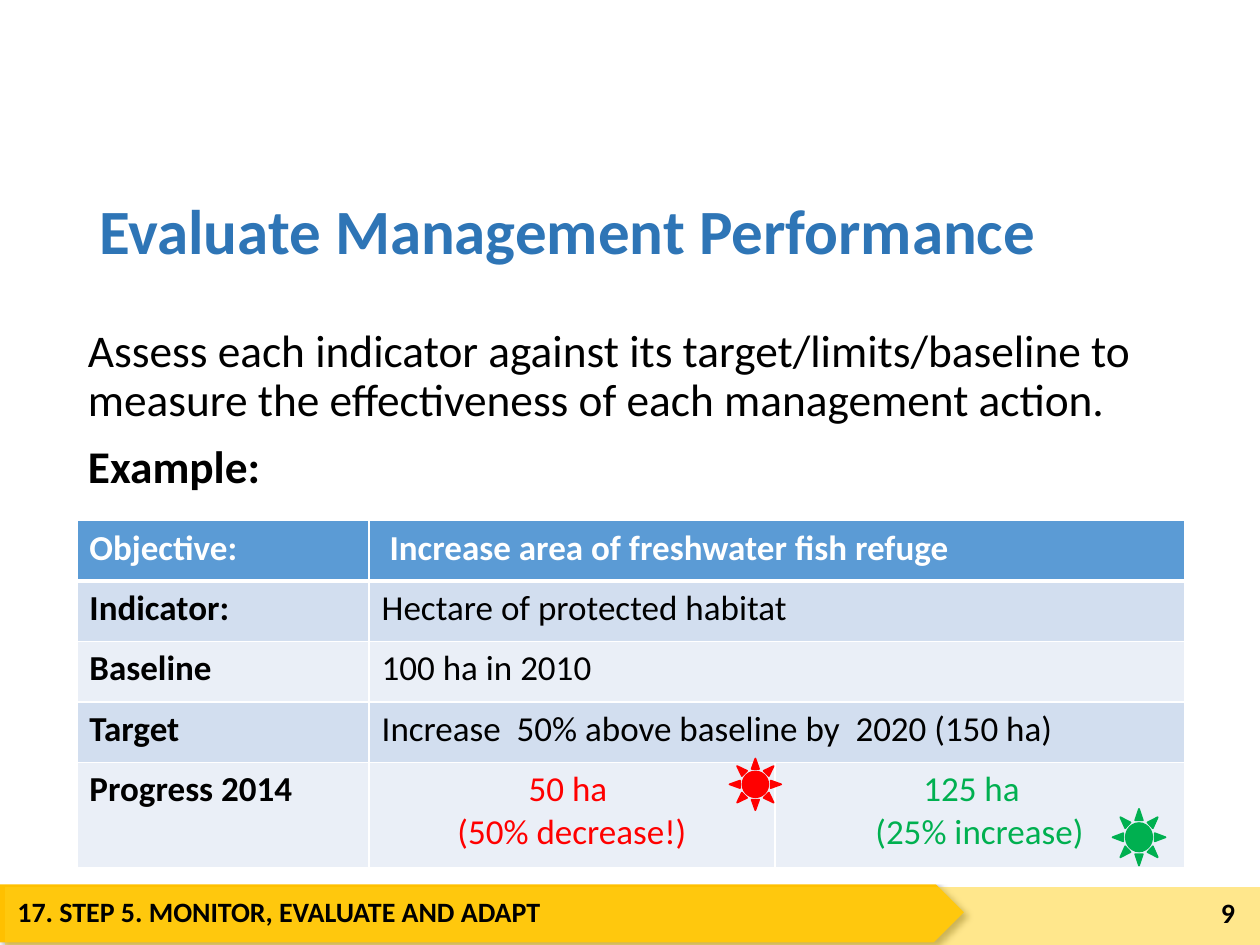
from lxml.etree import SubElement as Sub
from pptx import Presentation
from pptx.dml.color import RGBColor as Rgb
from pptx.enum.shapes import MSO_SHAPE as Form
from pptx.enum.text import MSO_ANCHOR as Anchor, PP_ALIGN as Align
from pptx.oxml import parse_xml
from pptx.oxml.ns import nsdecls, qn
from pptx.util import Inches, Pt
from dataclasses import dataclass


@dataclass(frozen=True)
class Theme:
    font: str = "Calibri"
    white: str = "FFFFFF"
    ink: str = "000000"
    title: str = "2E75B6"
    head: str = "5B9BD5"
    dark: str = "D2DEEF"
    light: str = "EAEFF7"
    gold: str = "FFC000"
    pale: str = "FFD01B"
    bad: str = "FF0000"
    good: str = "00B050"
    big: float = 36
    body: float = 25.9
    cell: float = 20
    foot: float = 16


T = Theme()
UNIT = Inches(0.1)  # the slide is a grid of 100 columns by 75 rows


def grid(*cells):
    return [round(n * UNIT) for n in cells]


def write(frame, *lines, size=T.cell, color=T.ink, bold=False, align=Align.LEFT,
          anchor=Anchor.TOP, lead=1.0, gap=0):
    """Fill a text frame; a trailing * on a line makes that line bold."""
    frame.word_wrap = True
    frame.vertical_anchor = anchor
    for i, line in enumerate(lines):
        para = frame.paragraphs[0] if i == 0 else frame.add_paragraph()
        para.alignment, para.line_spacing = align, lead
        if i:
            para.space_before = Pt(gap)
        run = para.add_run()
        run.text = line.rstrip("*")
        font = run.font
        font.name, font.size = T.font, Pt(size)
        font.bold = bold or line.endswith("*")
        font.color.rgb = Rgb.from_string(color)


deck = Presentation()
deck.slide_width, deck.slide_height = grid(100, 75)
slide = deck.slides.add_slide(deck.slide_layouts[6])
shapes = slide.shapes

# Footer bands and the white page above them
bands = {}
for name, form, box, color in [
    ("arrow", Form.PENTAGON, (0, 70, 76.5, 4.8), T.gold),
    ("strip", Form.RECTANGLE, (0.4, 70.4, 99.6, 4.9), T.pale),
    ("page", Form.RECTANGLE, (0, 13.8, 100, 56.4), T.white),
]:
    band = bands[name] = shapes.add_shape(form, *grid(*box))
    band.shadow.inherit = False
    band.fill.solid()
    band.fill.fore_color.rgb = Rgb.from_string(color)
    band.line.fill.background()

tint = bands["strip"].fill._xPr.find(qn("a:solidFill"))[0]
Sub(tint, qn("a:alpha"), val="50000")
glow = bands["arrow"]._element.spPr.find(qn("a:effectLst"))
glow.append(parse_xml(
    f'<a:outerShdw {nsdecls("a")} blurRad="{Pt(4)}" dist="{Pt(3)}" dir="2700000" '
    f'algn="tl" rotWithShape="0"><a:srgbClr val="{T.ink}"><a:alpha val="40000"/>'
    '</a:srgbClr></a:outerShdw>'))

# Text
for box, lines, style in [
    ((0.4, 70.5, 73.5, 4.1), ["17. STEP 5. MONITOR, EVALUATE AND ADAPT"],
     dict(size=T.foot, bold=True)),
    ((6.9, 14.5, 86.2, 8.2), ["Evaluate Management Performance"],
     dict(size=T.big, color=T.title, bold=True, anchor=Anchor.MIDDLE, lead=0.9)),
    ((6, 25.6, 89.3, 17.3),
     ["Assess each indicator against its target/limits/baseline to measure "
      "the effectiveness of each management action.", "Example:*"],
     dict(size=T.body, lead=0.9, gap=10)),
    ((91.7, 70.4, 7.3, 4), ["9"],
     dict(size=T.foot, bold=True, align=Align.RIGHT, anchor=Anchor.MIDDLE)),
]:
    write(shapes.add_textbox(*grid(*box)).text_frame, *lines, **style)

# Example table
rows = [
    ("Objective:", " Increase area of freshwater fish refuge"),
    ("Indicator:", "Hectare of protected habitat"),
    ("Baseline", "100 ha in 2010"),
    ("Target", "Increase  50% above baseline by  2020 (150 ha)"),
    ("Progress 2014",),
]
results = [(T.bad, "50 ha ", "(50% decrease!)"), (T.good, "125 ha  ", "(25% increase)")]
table = shapes.add_table(len(rows), 3, *grid(6.1, 41.3, 87.9, 27.6)).table
for col, wide in zip(table.columns, grid(23.2, 32.2, 32.5)):
    col.width = wide
for row, high in zip(table.rows, grid(*[4.8] * 4, 8.4)):
    row.height = high

for r, texts in enumerate(rows):
    top = r == 0
    fill = T.head if top else (T.dark if r % 2 else T.light)
    for c in range(3):
        cell = table.cell(r, c)
        cell.fill.solid()
        cell.fill.fore_color.rgb = Rgb.from_string(fill)
        for i, side in enumerate("LRTB"):
            thick = 3 if (top and side == "B") or (r == 1 and side == "T") else 1
            cell._tc.tcPr.insert(i, parse_xml(
                f'<a:ln{side} {nsdecls("a")} w="{Pt(thick)}"><a:solidFill>'
                f'<a:srgbClr val="{T.white}"/></a:solidFill></a:ln{side}>'))
    if len(texts) == 2:
        table.cell(r, 1).merge(table.cell(r, 2))
    for c, text in enumerate(texts):
        write(table.cell(r, c).text_frame, text, bold=top or c == 0,
              color=T.white if top else T.ink)

for c, (color, *lines) in enumerate(results, 1):
    write(table.cell(len(rows) - 1, c).text_frame, *lines, color=color, align=Align.CENTER)

# Sun markers beside the results
for box, color in [((88.3, 64.2, 4.2, 4.5), T.good), ((57.9, 60.2, 4.1, 4.1), T.bad)]:
    sun = shapes.add_shape(Form.SUN, *grid(*box))
    sun.shadow.inherit = False
    sun.fill.solid()
    sun.fill.fore_color.rgb = sun.line.color.rgb = Rgb.from_string(color)
    sun.line.width = Pt(1)

deck.save("out.pptx")
